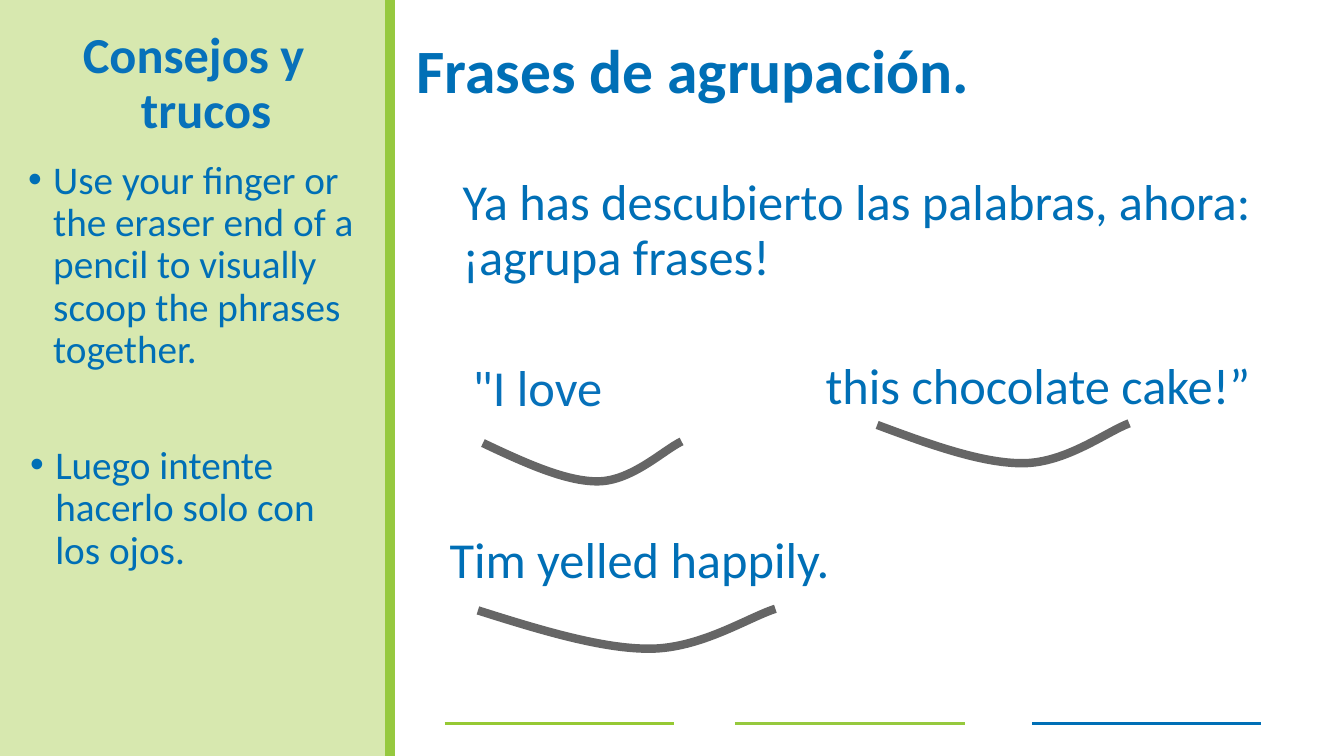
import dataclasses

import lxml.etree
import pptx
import pptx.dml.color
import pptx.enum.shapes
import pptx.enum.text
import pptx.oxml.ns
import pptx.util

Inches = pptx.util.Inches
Pt = pptx.util.Pt
qn = pptx.oxml.ns.qn
PP_ALIGN = pptx.enum.text.PP_ALIGN
MSO_ANCHOR = pptx.enum.text.MSO_ANCHOR

COLORS = {
    "panel": "D7E8AF",
    "divider": "96C93F",
    "green_left": "96C934",
    "green_mid": "96C93E",
    "blue": "006FB6",
    "accent": "0771BA",
    "scoop": "666666",
}


@dataclasses.dataclass
class Rule:
    x1: float
    y1: float
    x2: float
    y2: float
    color: str
    width: float


@dataclasses.dataclass
class Scoop:
    left: float
    top: float
    width: float


@dataclasses.dataclass
class Text:
    text: str
    box: tuple[float, float, float, float]
    fmt: dict = dataclasses.field(default_factory=dict)


RULES = [
    Rule(3.87, 0, 3.87, 7.5, "divider", 7),
    Rule(4.41, 7.18, 6.68, 7.18, "green_left", 2),
    Rule(7.29, 7.18, 9.57, 7.18, "green_mid", 2),
    Rule(10.24, 7.18, 12.51, 7.18, "blue", 2),
]

TIP = dict(size=28, bullet="•", margin=0.25, indent=-0.25)
TEXTS = [
    Text("Frases de agrupación.", (3.83, -0.18, 6.22, 1.73),
         dict(size=44, bold=True, inset=0.3, anchor=MSO_ANCHOR.MIDDLE, spacing=1.0)),
    Text("Consejos y trucos", (-0.08, 0.25, 3.75, 0.95),
         dict(bold=True, color="accent", align=PP_ALIGN.CENTER, margin=0.5, indent=-0.25)),
    Text("Use your finger or the eraser end of a pencil to visually scoop the phrases together.",
         (0.18, 1.54, 3.47, 2.47), TIP),
    Text("Luego intente hacerlo solo con los ojos.", (0.2, 4.37, 3.47, 2.47), TIP),
    Text("Ya has descubierto las palabras, ahora: ¡agrupa frases!", (4.49, 1.71, 8.25, 0.98)),
    Text("Tim yelled happily.", (4.36, 5.26, 4.12, 0.98)),
    Text("this chocolate cake!”", (8.09, 3.53, 5.13, 0.98)),
    Text("\"I love", (4.34, 3.55, 3.75, 0.98),
         dict(color="accent", margin=0.26, indent=-0.01)),
]

SCOOPS = [Scoop(4.79, 4.38, 1.97), Scoop(8.7, 4.2, 2.5), Scoop(4.74, 6.04, 2.95)]
SCOOP_HEIGHT = 0.4
SCOOP_CURVE = [(0, 0.04), (0.21, 0.53), (0.42, 1), (0.58, 0.99),
               (0.75, 0.98), (0.91, 0.21), (1, 0)]


def rgb(name: str) -> pptx.dml.color.RGBColor:
    return pptx.dml.color.RGBColor.from_string(COLORS[name])


def add_panel(slide) -> None:
    sp = slide.shapes.add_shape(pptx.enum.shapes.MSO_SHAPE.RECTANGLE,
                                0, 0, Inches(3.87), Inches(7.5))
    sp.shadow.inherit = False
    sp.fill.solid()
    sp.fill.fore_color.rgb = rgb("panel")
    sp.line.fill.background()


def add_rule(slide, rule: Rule) -> None:
    ends = (Inches(v) for v in (rule.x1, rule.y1, rule.x2, rule.y2))
    cxn = slide.shapes.add_connector(pptx.enum.shapes.MSO_CONNECTOR.STRAIGHT, *ends)
    cxn.line.color.rgb = rgb(rule.color)
    cxn.line.width = Pt(rule.width)
    lxml.etree.SubElement(cxn._element.spPr, qn("a:effectLst"))


def add_text(slide, text: str, box: tuple[float, float, float, float], *,
             size: float = 36, color: str = "blue", bold: bool = False,
             align=PP_ALIGN.LEFT, anchor=MSO_ANCHOR.TOP, inset: float = 0.1,
             spacing: float = 0.9, margin: float = 0, indent: float = 0,
             bullet: str = "") -> None:
    tf = slide.shapes.add_textbox(*(Inches(v) for v in box)).text_frame
    tf.word_wrap = True
    tf.vertical_anchor = anchor
    tf.margin_left = Inches(inset)
    p = tf.paragraphs[0]
    p.alignment = align
    p.line_spacing = spacing
    pPr = p._p.get_or_add_pPr()
    pPr.set("marL", str(Inches(margin)))
    pPr.set("indent", str(Inches(indent)))
    if bullet:
        bu_clr = lxml.etree.SubElement(pPr, qn("a:buClr"))
        lxml.etree.SubElement(bu_clr, qn("a:srgbClr"), val=COLORS[color])
        lxml.etree.SubElement(pPr, qn("a:buFont"), typeface="Arial")
        lxml.etree.SubElement(pPr, qn("a:buChar"), char=bullet)
    r = p.add_run()
    r.text = text
    r.font.name = "Calibri"
    r.font.size = Pt(size)
    r.font.bold = bold
    r.font.color.rgb = rgb(color)


def add_scoop(slide, scoop: Scoop) -> None:
    points = [(Inches(scoop.left + x * scoop.width), Inches(scoop.top + y * SCOOP_HEIGHT))
              for x, y in SCOOP_CURVE]
    builder = slide.shapes.build_freeform(*points[0])
    builder.add_line_segments(points[1:], close=False)
    sp = builder.convert_to_shape()
    sp.shadow.inherit = False
    sp.fill.background()
    sp.line.color.rgb = rgb("scoop")
    sp.line.width = Pt(6)
    outline = next(sp._element.iter(qn("a:path")))
    segments = outline.findall(qn("a:lnTo"))
    for start in range(0, len(segments), 3):
        curve = lxml.etree.SubElement(outline, qn("a:cubicBezTo"))
        for segment in segments[start:start + 3]:
            curve.append(segment[0])
            outline.remove(segment)


def main() -> None:
    prs = pptx.Presentation()
    prs.slide_width = Inches(13.33)
    prs.slide_height = Inches(7.5)
    slide = prs.slides.add_slide(prs.slide_layouts[6])
    add_panel(slide)
    for rule in RULES:
        add_rule(slide, rule)
    for item in TEXTS:
        add_text(slide, item.text, item.box, **item.fmt)
    for scoop in SCOOPS:
        add_scoop(slide, scoop)
    prs.save("out.pptx")


if __name__ == "__main__":
    main()
